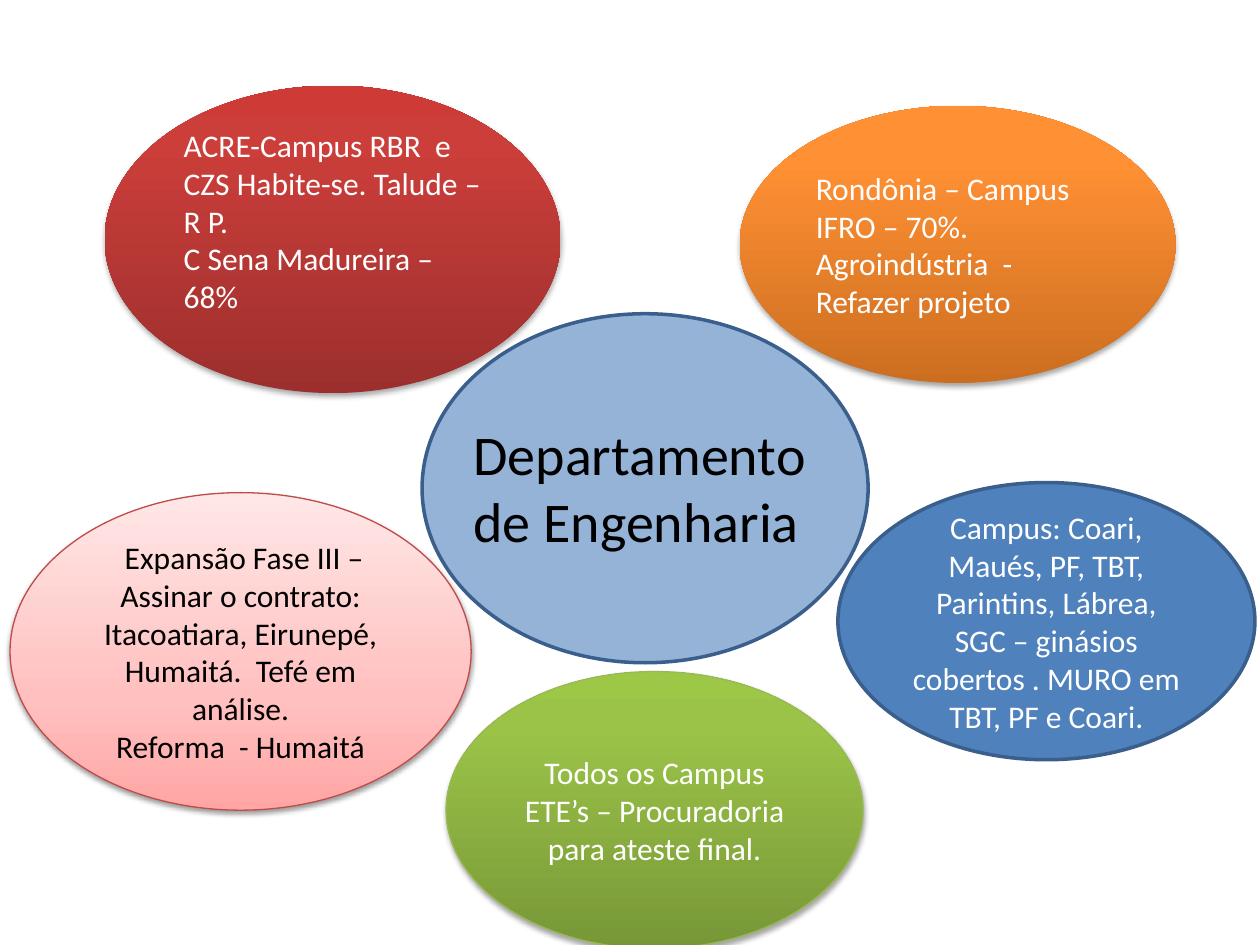
import pptx
import pptx.dml.color
import pptx.enum.shapes
import pptx.enum.text
import pptx.oxml
import pptx.oxml.ns
import pptx.util
from pptx.util import Inches

COLORS = {
    "white": "FFFFFF",
    "black": "000000",
    "center": "95B3D7",
    "blue": "4F81BD",
    "blue_edge": "3A5F8C",
    "pink_edge": "BF4C48",
    "green_edge": "98B955",
}
# Gradient stops run from the bottom of the ellipse to its top.
GRADIENTS = {
    "pink": [(0, "FFA6A5"), (35, "FFC0BF"), (100, "FFE7E7")],
    "red": [(0, "9C2F2D"), (80, "CB3E3A"), (100, "CE3B37")],
    "orange": [(0, "CC6E20"), (80, "FF9034"), (100, "FF9136")],
    "green": [(0, "779737"), (80, "9BC348"), (100, "9DC746")],
}
ALIGN = pptx.enum.text.PP_ALIGN


def rgb(name):
    return pptx.dml.color.RGBColor.from_string(COLORS[name])


class SlideBuilder:
    """Holds the text style and the slide being filled."""

    font = "Calibri"
    body_size = 18
    title_size = 32

    def __init__(self, slide):
        self.slide = slide

    def fill_text(self, frame, lines, size, color, align):
        frame.word_wrap = True
        frame.text = "\n".join(lines)
        for para in frame.paragraphs:
            para.alignment = align
            for span in para.runs:
                span.font.name = self.font
                span.font.size = pptx.util.Pt(size)
                span.font.color.rgb = rgb(color)

    def ellipse(self, place, fill, edge=None, edge_width=0.75, lines=(),
                color="white", align=ALIGN.CENTER):
        oval = self.slide.shapes.add_shape(
            pptx.enum.shapes.MSO_SHAPE.OVAL, *map(Inches, place))
        oval.shadow.inherit = False
        if fill in GRADIENTS:
            self.gradient(oval, GRADIENTS[fill])
        else:
            oval.fill.solid()
            oval.fill.fore_color.rgb = rgb(fill)
        if edge:
            oval.line.color.rgb = rgb(edge)
            oval.line.width = pptx.util.Pt(edge_width)
        else:
            oval.line.fill.background()
        if lines:
            oval.text_frame.vertical_anchor = pptx.enum.text.MSO_ANCHOR.MIDDLE
            self.fill_text(oval.text_frame, lines, self.body_size, color, align)
        return oval

    def gradient(self, shape, stops):
        shape.fill.gradient()
        shape.fill.gradient_angle = 90
        stop_list = shape.element.spPr.find(".//" + pptx.oxml.ns.qn("a:gsLst"))
        for stop in list(stop_list):
            stop_list.remove(stop)
        for percent, color in stops:
            stop_list.append(pptx.oxml.parse_xml(
                f'<a:gs {pptx.oxml.ns.nsdecls("a")} pos="{percent * 1000}">'
                f'<a:srgbClr val="{color}"/></a:gs>'))

    def shadow(self, shape, opacity=35, distance=1.8):
        """Drop a soft black shadow straight down; distance is in points."""
        effects = shape.element.spPr.find(pptx.oxml.ns.qn("a:effectLst"))
        effects.append(pptx.oxml.parse_xml(
            f'<a:outerShdw {pptx.oxml.ns.nsdecls("a")} '
            f'blurRad="{pptx.util.Pt(3.1)}" dist="{pptx.util.Pt(distance)}" '
            f'dir="5400000" rotWithShape="0"><a:srgbClr val="{COLORS["black"]}">'
            f'<a:alpha val="{opacity * 1000}"/></a:srgbClr></a:outerShdw>'))

    def title(self, place, text):
        box = self.slide.shapes.add_textbox(*map(Inches, place))
        self.fill_text(box.text_frame, [text], self.title_size, "black", ALIGN.LEFT)


def main():
    deck = pptx.Presentation()
    deck.slide_width, deck.slide_height = Inches(10), Inches(7.5)
    page = SlideBuilder(deck.slides.add_slide(deck.slide_layouts[6]))

    page.ellipse((3.35, 2.49, 3.54, 2.77), "center", "blue_edge", 2)

    expansion = page.ellipse(
        (0.08, 3.91, 3.66, 2.52), "pink", "pink_edge", color="black",
        lines=[" Expansão Fase III – Assinar o contrato: Itacoatiara, Eirunepé, "
               "Humaitá.  Tefé em análise.", "Reforma  - Humaitá"])
    page.shadow(expansion, opacity=38, distance=1.6)

    acre = page.ellipse(
        (0.83, 0.68, 3.62, 2.44), "red", align=ALIGN.LEFT,
        lines=["ACRE-Campus RBR  e CZS Habite-se. Talude – R P.",
               "C Sena Madureira – 68%"])
    acre.text_frame.margin_bottom = Inches(0.35)
    page.shadow(acre)

    rondonia = page.ellipse(
        (5.87, 0.84, 3.46, 2.2), "orange", align=ALIGN.LEFT,
        lines=["Rondônia – Campus IFRO – 70%. Agroindústria  -  Refazer projeto"])
    page.shadow(rondonia)

    page.ellipse(
        (6.65, 3.83, 3.31, 2.2), "blue", "blue_edge", 2,
        lines=["Campus: Coari, Maués, PF, TBT, Parintins, Lábrea, SGC – ginásios "
               "cobertos . MURO em TBT, PF e Coari."])

    page.title((3.66, 3.28, 3.07, 1.18), "Departamento de Engenharia")

    all_campuses = page.ellipse(
        (3.54, 5.33, 3.31, 2.2), "green", "green_edge",
        lines=["Todos os Campus ETE’s – Procuradoria para ateste final."])
    page.shadow(all_campuses)

    deck.save("out.pptx")


if __name__ == "__main__":
    main()
